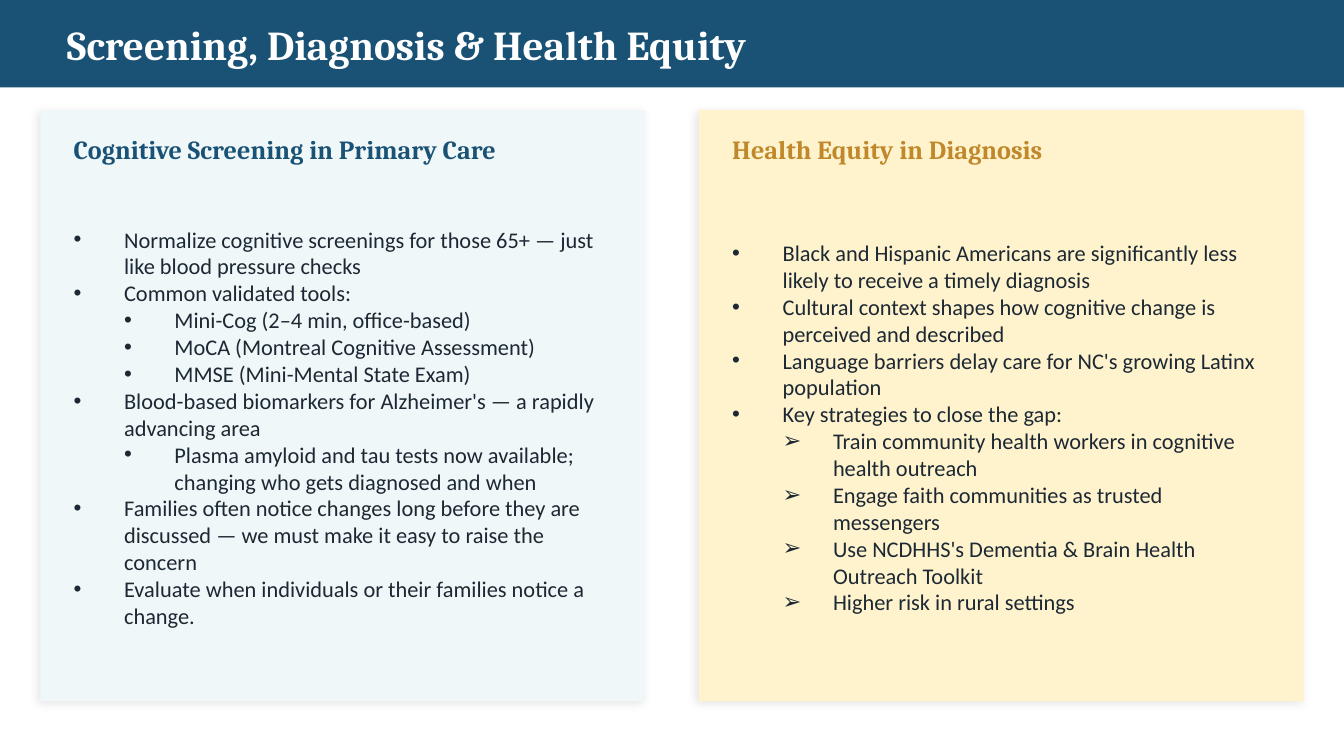
from lxml.etree import SubElement
from pptx import Presentation
from pptx.dml.color import RGBColor
from pptx.enum.shapes import MSO_SHAPE
from pptx.enum.text import MSO_ANCHOR
from pptx.oxml.ns import qn
from pptx.util import Pt

PX = 4572
INDENT = 75
NAVY = RGBColor(0x1A, 0x52, 0x76)
GOLD = RGBColor(0xC0, 0x88, 0x2A)
INK = RGBColor(0x1C, 0x28, 0x33)
WHITE = RGBColor(0xFF, 0xFF, 0xFF)
MIST = RGBColor(0xF0, 0xF7, 0xF8)
CREAM = RGBColor(0xFF, 0xF3, 0xCD)

TITLE_FONT = {"name": "Cambria", "size": Pt(22), "bold": True}
HEADING_FONT = {"name": "Cambria", "size": Pt(14), "bold": True}
BODY_FONT = {"name": "Calibri", "size": Pt(12)}

SCREENING = [
    (0, "Normalize cognitive screenings for those 65+ — just like blood pressure checks"),
    (0, "Common validated tools:"),
    (1, "Mini-Cog (2–4 min, office-based)"),
    (1, "MoCA (Montreal Cognitive Assessment)"),
    (1, "MMSE (Mini-Mental State Exam)"),
    (0, "Blood-based biomarkers for Alzheimer's — a rapidly advancing area"),
    (1, "Plasma amyloid and tau tests now available; changing who gets diagnosed and when"),
    (0, "Families often notice changes long before they are discussed — "
        "we must make it easy to raise the concern"),
    (0, "Evaluate when individuals or their families notice a change."),
]
EQUITY = [
    (0, "Black and Hispanic Americans are significantly less likely to receive a timely diagnosis"),
    (0, "Cultural context shapes how cognitive change is perceived and described"),
    (0, "Language barriers delay care for NC's growing Latinx population"),
    (0, "Key strategies to close the gap:"),
    (1, "Train community health workers in cognitive health outreach"),
    (1, "Engage faith communities as trusted messengers"),
    (1, "Use NCDHHS's Dementia & Brain Health Outreach Toolkit"),
    (1, "Higher risk in rural settings"),
]


def emu(*lengths):
    return [length * PX for length in lengths]


def add_block(slide, box, color):
    block = slide.shapes.add_shape(MSO_SHAPE.RECTANGLE, *emu(*box))
    block.fill.solid()
    block.fill.fore_color.rgb = color
    block.line.fill.background()
    block.shadow.inherit = False
    return block


def add_shadow(block):
    effects = block._element.spPr.find(qn("a:effectLst"))
    shadow = SubElement(effects, qn("a:outerShdw"), blurRad=str(Pt(5)),
                        dist=str(Pt(2)), dir=str(135 * 60000),
                        algn="bl", rotWithShape="0")
    black = SubElement(shadow, qn("a:srgbClr"), val="000000")
    SubElement(black, qn("a:alpha"), val="10000")


def add_frame(slide, box):
    frame = slide.shapes.add_textbox(*emu(*box)).text_frame
    frame.word_wrap = True
    frame.vertical_anchor = MSO_ANCHOR.MIDDLE
    return frame


def write(paragraph, text, style, color):
    run = paragraph.add_run()
    run.text = text
    for attribute, value in style.items():
        setattr(run.font, attribute, value)
    run.font.color.rgb = color


def add_bullet(paragraph, level, mark):
    paragraph.level = level
    properties = paragraph._p.get_or_add_pPr()
    properties.set("marL", str(INDENT * (level + 1) * PX))
    properties.set("indent", str(-INDENT * PX))
    SubElement(properties, qn("a:buFont"), typeface="Arial")
    SubElement(properties, qn("a:buChar"), char=mark)


def add_header(slide, box, title):
    left, top, width, height = box
    add_block(slide, box, NAVY)
    frame = add_frame(slide, (left + 80, top + 10, width - 160, height - 20))
    write(frame.paragraphs[0], title, TITLE_FONT, WHITE)


def add_card(slide, box, heading, points, marks, fill, accent):
    left, top, width, height = box
    add_shadow(add_block(slide, box, fill))
    heading_frame = add_frame(slide, (left + 30, top + 16, width - 60, 84))
    write(heading_frame.paragraphs[0], heading, HEADING_FONT, accent)
    points_frame = add_frame(slide, (left + 30, top + 112, width - 60, height - 160))
    for index, (level, point) in enumerate(points):
        paragraph = points_frame.add_paragraph() if index else points_frame.paragraphs[0]
        add_bullet(paragraph, level, marks[level])
        write(paragraph, point, BODY_FONT, INK)


def main():
    deck = Presentation()
    deck.slide_width, deck.slide_height = emu(2000, 1125)
    slide = deck.slides.add_slide(deck.slide_layouts[6])
    add_header(slide, (0, 0, 2000, 130), "Screening, Diagnosis & Health Equity")
    cards = [
        ("Cognitive Screening in Primary Care", SCREENING, "••", MIST, NAVY),
        ("Health Equity in Diagnosis", EQUITY, "•➢", CREAM, GOLD),
    ]
    for column, card in enumerate(cards):
        add_card(slide, (60 + 980 * column, 164, 900, 880), *card)
    deck.save("out.pptx")


if __name__ == "__main__":
    main()
